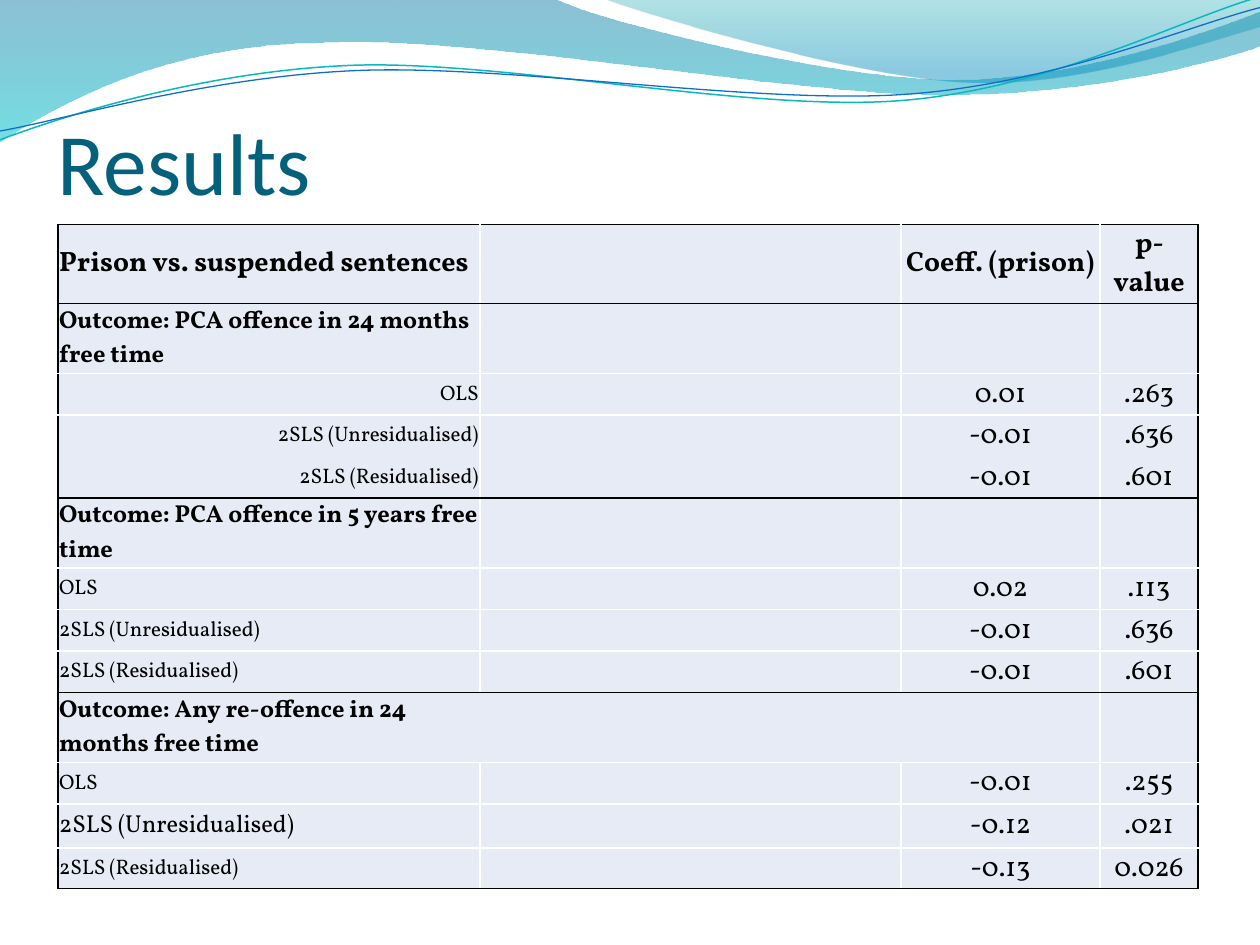
"""Build the results slide: layered header waves, a title and a regression table."""
from dataclasses import dataclass
from math import cos, radians, sin
from typing import Any

from lxml.etree import SubElement
from pptx import Presentation
from pptx.dml.color import RGBColor
from pptx.enum.text import MSO_ANCHOR as Anchor, MSO_AUTO_SIZE as AutoSize, PP_ALIGN as Align
from pptx.oxml.ns import qn
from pptx.util import Inches, Pt

COLUMNS, ROWS = 10, 7.5
LEFT, RIGHT, CENTER = Align.LEFT, Align.RIGHT, Align.CENTER

FILLED_WAVES = [
    ((-0.01, -0.01, 10.02, 1.14),
     [[(0, -0.01)], [(4.4, -0.01)],
      [(4.76, 0.17), (6.64, 0.63), (7.58, 0.63)], [(8.53, 0.63), (9.58, 0.26), (10, 0.09)],
      [(10.01, 0.36)], [(9.83, 0.44), (8.7, 0.76), (7.46, 0.75)],
      [(6.22, 0.75), (3.82, 0.28), (2.57, 0.34)], [(1.29, 0.35), (0.46, 0.83), (-0.01, 1.13)],
      [(0, -0.01)]],
     [(0, "0074A1", 45), (1, "00C6CF", 55)]),
    ((4.79, -0.01, 5.21, 0.7),
     [[(4.79, -0.01)], [(5.09, 0.11), (6.82, 0.62), (7.69, 0.65)],
      [(8.56, 0.69), (9.61, 0.32), (10, 0.21)], [(10, 0)], [(4.79, -0.01)]],
     [(0, "00A1A9", 30), (0.8, "008BBF", 45)]),
]
LINE_TILT = 357.3
LINE_WAVES = [
    ((-0.02, 0.22, 10.02, 0.71),
     [[(0, 1.11)], [(0.48, 0.93), (1.58, 0.57), (2.77, 0.52)],
      [(3.95, 0.47), (5.93, 0.89), (7.13, 0.8)], [(8.33, 0.71), (9.38, 0.15), (9.98, -0.02)]],
     "0AB8BF", 0.85),
    ((-0.02, 0.3, 10.03, 0.58),
     [[(0, 1.04)], [(0.47, 0.96), (1.64, 0.61), (2.83, 0.56)],
      [(4.03, 0.51), (5.97, 0.83), (7.17, 0.75)], [(8.36, 0.67), (9.41, 0.21), (10, 0.06)]],
     "0F6FC6", 0.75),
]

COLUMN_WIDTHS = [3.35, 3.34, 1.58, 0.78]
RESULTS = [
    (0.56, "Prison vs. suspended sentences", 16, LEFT, "Coeff. (prison)", "p-value"),
    (0.48, "Outcome: PCA offence in 24 months free time", 14, LEFT, "", ""),
    (0.33, "OLS", 12, RIGHT, "0.01", ".263"),
    (0.33, "2SLS (Unresidualised)", 12, RIGHT, "-0.01", ".636"),
    (0.33, "2SLS (Residualised)", 12, RIGHT, "-0.01", ".601"),
    (0.48, "Outcome: PCA offence in 5 years free time", 14, LEFT, "", ""),
    (0.33, "OLS", 12, LEFT, "0.02", ".113"),
    (0.33, "2SLS (Unresidualised)", 12, LEFT, "-0.01", ".636"),
    (0.33, "2SLS (Residualised)", 12, LEFT, "-0.01", ".601"),
    (0.48, "Outcome: Any re-offence in 24\nmonths free time", 14, LEFT, "", ""),
    (0.33, "OLS", 12, LEFT, "-0.01", ".255"),
    (0.35, "2SLS (Unresidualised)", 14, LEFT, "-0.12", ".021"),
    (0.3, "2SLS (Residualised)", 12, LEFT, "-0.13", "0.026"),
]
BLOCK_ENDS = {0, 4, 8, 12}
UNRULED_ROW = 3
MERGED_ROW = 9


def color(code):
    """Turn a hex string into a colour."""
    return RGBColor.from_string(code)


@dataclass
class SlideBuilder:
    """Hold the style and the current slide, measured on a 10 by 7.5 grid."""
    presentation: Any
    slide: Any
    title_font: str = "Calibri"
    table_font: str = "Vollkorn"
    title_color: str = "04617B"
    ink: str = "000000"
    rule: str = "FFFFFF"
    cell_fill: str = "E7EBF5"

    def across(self, columns):
        """Convert grid columns to a length."""
        return round(self.presentation.slide_width * columns / COLUMNS)

    def down(self, rows):
        """Convert grid rows to a length."""
        return round(self.presentation.slide_height * rows / ROWS)

    def place(self, shape, left, top, width, height):
        """Set the frame of a shape."""
        shape.left, shape.top = self.across(left), self.down(top)
        shape.width, shape.height = self.across(width), self.down(height)

    def wave(self, box, segments, close=False, tilt=0):
        """Draw an outline of cubic curves and straight lines inside a box."""
        left, top, width, height = box
        turn = radians(-tilt)

        def local(point):
            """Undo the tilt and measure a point from the corner of the box."""
            x, y = point[0] - left - width / 2, point[1] - top - height / 2
            return (self.across(x * cos(turn) - y * sin(turn) + width / 2),
                    self.down(x * sin(turn) + y * cos(turn) + height / 2))

        start, *ends = [local(segment[-1]) for segment in segments]
        builder = self.slide.shapes.build_freeform(*start)
        builder.add_line_segments(ends, close=close)
        shape = builder.convert_to_shape()
        shape.shadow.inherit = False
        self.place(shape, *box)
        shape.rotation = tilt
        outline = next(shape.element.iter(qn("a:path")))
        outline.set("w", str(shape.width))
        outline.set("h", str(shape.height))
        for step, segment in zip(list(outline), segments):
            for point in list(step):
                step.remove(point)
            if len(segment) == 3:
                step.tag = qn("a:cubicBezTo")
            for x, y in map(local, segment):
                SubElement(step, qn("a:pt"), x=str(x), y=str(y))
        return shape

    def filled_wave(self, box, segments, stops):
        """Draw a wave with a translucent vertical gradient."""
        shape = self.wave(box, segments, close=True)
        shape.line.fill.background()
        shape.fill.gradient()
        shape.fill.gradient_angle = 270
        for stop, (position, code, _) in zip(shape.fill.gradient_stops, stops):
            stop.position = position
            stop.color.rgb = color(code)
        for element, (_, _, opacity) in zip(shape.element.iter(qn("a:srgbClr")), stops):
            SubElement(element, qn("a:alpha"), val=str(opacity * 1000))

    def line_wave(self, box, segments, code, width):
        """Draw a thin, open, tilted wave."""
        shape = self.wave(box, segments, tilt=LINE_TILT)
        shape.fill.background()
        shape.line.color.rgb = color(code)
        shape.line.width = Pt(width)

    def title(self, text, *box):
        """Place and format the title placeholder in front of the waves."""
        shape = self.slide.shapes.title
        shape.element.getparent().append(shape.element)
        self.place(shape, *box)
        frame = shape.text_frame
        frame.auto_size = AutoSize.NONE
        frame.vertical_anchor = Anchor.BOTTOM
        frame.margin_left = frame.margin_right = frame.margin_bottom = 0
        frame.margin_top = Inches(0.05)
        paragraph = frame.paragraphs[0]
        paragraph.alignment = LEFT
        self.run(paragraph, text, 50, self.title_font, self.title_color)

    def run(self, paragraph, text, size, font, code, bold=False):
        """Add one formatted run."""
        run = paragraph.add_run()
        run.text = text
        run.font.size, run.font.name, run.font.bold = Pt(size), font, bold
        run.font.color.rgb = color(code)

    def borders(self, cell, codes):
        """Rule the left, right, top and bottom edges of a cell."""
        properties = cell._tc.get_or_add_tcPr()
        for side, code in zip("LRTB", codes):
            line = SubElement(properties, qn(f"a:ln{side}"), w=str(Pt(1)))
            fill = SubElement(line, qn("a:solidFill" if code else "a:noFill"))
            if code:
                SubElement(fill, qn("a:srgbClr"), val=code)

    def cell(self, cell, text, size, alignment, bold, edges):
        """Fill, rule and write one table cell."""
        self.borders(cell, edges)
        cell.fill.solid()
        cell.fill.fore_color.rgb = color(self.cell_fill)
        cell.margin_left = cell.margin_right = cell.margin_top = Inches(0.01)
        cell.margin_bottom = 0
        cell.vertical_anchor = Anchor.MIDDLE
        frame = cell.text_frame
        for index, line in enumerate(text.split("\n")):
            paragraph = frame.add_paragraph() if index else frame.paragraphs[0]
            paragraph.alignment = alignment
            if line:
                self.run(paragraph, line, size, self.table_font, self.ink, bold)
            else:
                SubElement(paragraph._p, qn("a:endParaRPr"), sz="1200")

    def rule_below(self, row):
        """Return the colour of the rule below a row."""
        if row == UNRULED_ROW:
            return None
        return self.ink if row in BLOCK_ENDS or row < 0 else self.rule

    def table(self, left, top, widths, rows):
        """Add the results table with dark rules around each block."""
        table = self.slide.shapes.add_table(
            len(rows), len(widths), self.across(left), self.down(top),
            self.across(sum(widths)), self.down(sum(row[0] for row in rows))).table
        table.first_row = table.horz_banding = False
        for column, width in zip(table.columns, widths):
            column.width = self.across(width)
        table.cell(MERGED_ROW, 0).merge(table.cell(MERGED_ROW, 2))
        last = len(widths) - 1
        for index, (height, label, size, alignment, *values) in enumerate(rows):
            table.rows[index].height = self.down(height)
            bold = index == 0 or not any(values)
            for column, text in enumerate([label, "", *values]):
                edges = (self.rule if column else self.ink,
                         self.ink if column == last else self.rule,
                         self.rule_below(index - 1), self.rule_below(index))
                style = (16, CENTER) if column else (size, alignment)
                self.cell(table.cell(index, column), text, *style, bold, edges)


def main():
    """Assemble and save the slide."""
    presentation = Presentation()
    presentation.slide_width, presentation.slide_height = Inches(COLUMNS), Inches(ROWS)
    slide = presentation.slides.add_slide(presentation.slide_layouts[5])
    builder = SlideBuilder(presentation, slide)
    for wave in FILLED_WAVES:
        builder.filled_wave(*wave)
    for wave in LINE_WAVES:
        builder.line_wave(*wave)
    builder.title("Results", 0.46, 0.44, 9.08, 1.25)
    builder.table(0.46, 1.78, COLUMN_WIDTHS, RESULTS)
    presentation.save("out.pptx")


if __name__ == "__main__":
    main()
